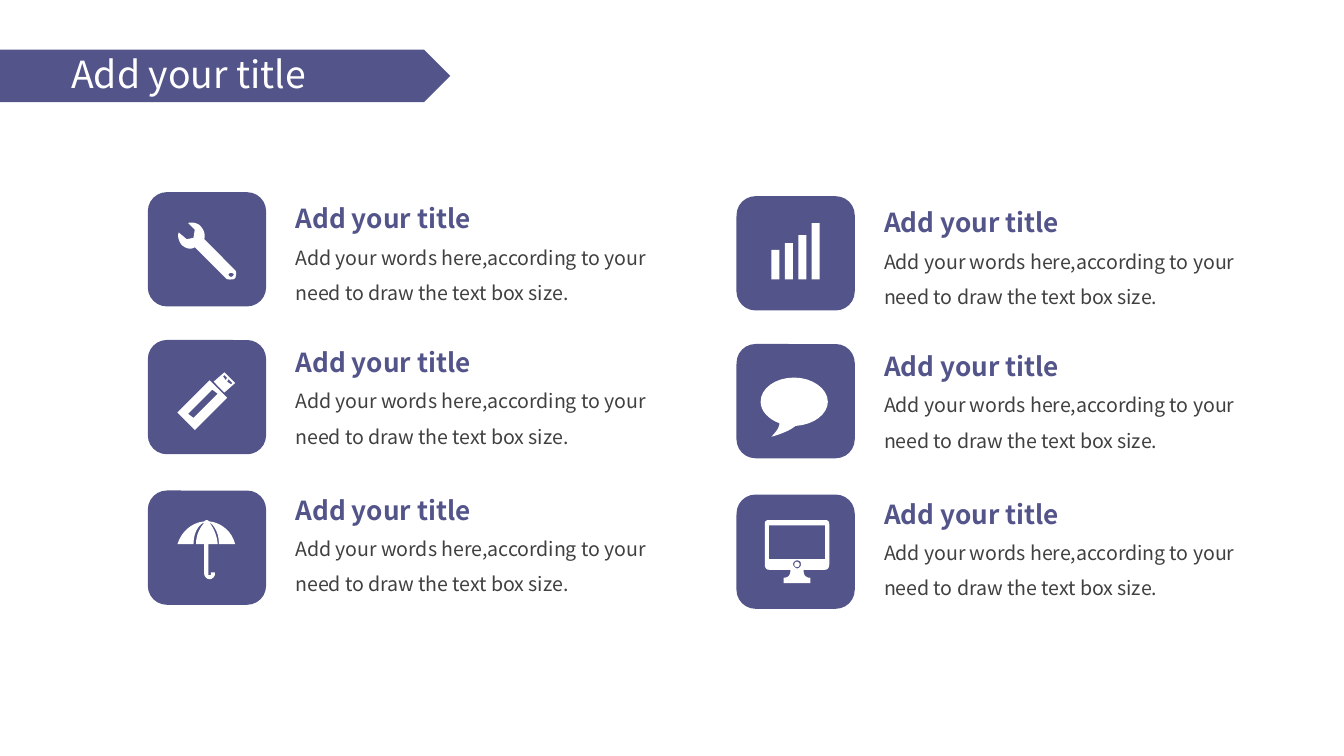
from pptx import Presentation
from pptx.dml.color import RGBColor
from pptx.enum.shapes import MSO_SHAPE as Preset
from pptx.enum.text import MSO_ANCHOR as Anchor, MSO_AUTO_SIZE as AutoSize, PP_ALIGN as Align
from pptx.util import Inches, Pt

PURPLE = RGBColor(0x53, 0x54, 0x8A)
WHITE = RGBColor(0xFF, 0xFF, 0xFF)
GREY = RGBColor(0x40, 0x40, 0x40)
FONT = "Noto Sans CJK JP"
HEADING = "Add your title"
BODY = "Add your words here,according to your need to draw the text box size."

COLUMNS = (1.1, 5.48)
TILE_ROWS = (1.43, 2.53, 3.65)
TEXT_ROWS = (1.34, 2.41, 3.51)
RIGHT_DROP = 0.03
TILE_WIDTH, TILE_HEIGHT = 0.88, 0.85
CURVE_STEPS = 8

WRENCH = [
    [(42, 35), (43, 32, 42, 28, 39, 25), (37, 23, 33, 22, 30, 23), (35, 28), (34, 34),
     (29, 35), (23, 30), (22, 33, 23, 36, 25, 39), (28, 42, 32, 43, 35, 41), (58, 64),
     (59, 65, 60, 65, 61, 65), (63, 65, 64, 65, 65, 64), (66, 62, 66, 59, 65, 58)],
    [(62, 63), (61, 63, 60, 62, 60, 61), (60, 61, 61, 60, 62, 60),
     (63, 60, 64, 61, 64, 61), (64, 62, 63, 63, 62, 63)],
]
USB_PLUG = [
    [(65, 32), (57, 24), (49, 31), (57, 39)],
    [(58, 30), (56, 27), (57, 26), (59, 28)],
    [(62, 33), (59, 31), (60, 29), (63, 32)],
]
USB_BODY = [
    [(46, 30), (22, 54), (35, 67), (59, 43)],
    [(34, 58), (30, 55), (48, 37), (52, 40)],
]
UMBRELLA = [
    [(53, 40), (65, 40), (63, 31, 55, 24, 46, 23), (45, 23, 45, 22, 44, 22),
     (43, 22, 42, 23, 42, 23), (32, 24, 25, 31, 22, 40), (34, 40),
     (34, 29, 40, 24, 42, 24), (35, 32, 36, 40, 36, 40), (42, 40), (42, 62),
     (42, 64, 44, 66, 46, 66), (48, 66, 50, 64, 50, 62), (50, 61), (47, 61), (47, 62),
     (47, 63, 47, 63, 46, 63), (45, 63, 45, 63, 45, 62), (45, 40), (52, 40),
     (52, 40, 52, 32, 46, 24), (47, 24, 53, 29, 53, 40)],
]
BUBBLE = [
    [(68, 43), (68, 33, 56, 25, 43, 25), (29, 25, 18, 33, 18, 43),
     (18, 50, 24, 56, 32, 59), (32, 61, 31, 64, 26, 69), (26, 69, 38, 66, 44, 61),
     (58, 60, 68, 52, 68, 43)],
]
MONITOR = [
    [(66, 19), (24, 19), (22, 19, 21, 20, 21, 22), (21, 52), (21, 54, 22, 56, 24, 56),
     (40, 56), (40, 56, 41, 62, 35, 62), (35, 66), (55, 66), (55, 62),
     (49, 62, 50, 56, 50, 56), (66, 56), (68, 56, 69, 54, 69, 52), (69, 22),
     (69, 20, 68, 19, 66, 19)],
    [(42, 52), (42, 50, 44, 49, 45, 49), (47, 49, 48, 50, 48, 52),
     (48, 53, 47, 55, 45, 55), (44, 55, 42, 53, 42, 52)],
    [(66, 48), (24, 48), (24, 23), (66, 23)],
]
BAR_TOPS, BAR_BOTTOM = (0.4, 0.35, 0.29, 0.2), 0.62


def paint(shape, color):
    """Give a shape a flat fill without line or shadow."""
    shape.shadow.inherit = False
    shape.fill.solid()
    shape.fill.fore_color.rgb = color
    shape.line.fill.background()
    return shape


def add_preset(page, kind, left, top, width, height, color):
    """Add a flat preset shape placed in inches."""
    lengths = map(Inches, (left, top, width, height))
    return paint(page.shapes.add_shape(kind, *lengths), color)


def flatten(contour):
    """Turn line ends (pairs) and Bézier curves (sixes) into a list of points."""
    points = [contour[0]]
    for segment in contour[1:]:
        if len(segment) == 2:
            points.append(segment)
            continue
        start, first, second, end = points[-1], segment[:2], segment[2:4], segment[4:]
        for step in range(1, CURVE_STEPS + 1):
            t = step / CURVE_STEPS
            s = 1 - t
            points.append(tuple(
                s**3 * a + 3 * s * s * t * b + 3 * s * t * t * c + t**3 * d
                for a, b, c, d in zip(start, first, second, end)))
    return points


def add_outline(page, left, top, contours):
    """Draw white contours, given in hundredths of an inch from the tile corner."""
    builder = None
    for contour in contours:
        points = [(Inches(left + x / 100), Inches(top + y / 100)) for x, y in flatten(contour)]
        if builder is None:
            builder = page.shapes.build_freeform(*points[0], scale=1.0)
        else:
            builder.move_to(*points[0])
        builder.add_line_segments(points[1:], close=True)
    paint(builder.convert_to_shape(), WHITE)


def add_wrench(page, left, top):
    """Draw the wrench icon."""
    add_outline(page, left, top, WRENCH)


def add_usb_stick(page, left, top):
    """Draw the USB stick icon."""
    add_outline(page, left, top, USB_PLUG)
    add_outline(page, left, top, USB_BODY)


def add_umbrella(page, left, top):
    """Draw the umbrella icon."""
    add_outline(page, left, top, UMBRELLA)


def add_bars(page, left, top):
    """Draw the rising bars icon."""
    for index, bar_top in enumerate(BAR_TOPS):
        add_preset(page, Preset.RECTANGLE, left + 0.26 + index * 0.1, top + bar_top,
                   0.06, BAR_BOTTOM - bar_top, WHITE)


def add_bubble(page, left, top):
    """Draw the speech bubble icon."""
    add_outline(page, left, top, BUBBLE)


def add_monitor(page, left, top):
    """Draw the monitor icon with its button."""
    add_outline(page, left, top, MONITOR)
    add_preset(page, Preset.OVAL, left + 0.43, top + 0.5, 0.04, 0.04, WHITE)


def add_span(para, text, size, color, bold=False):
    """Add one formatted run to a paragraph."""
    span = para.add_run()
    span.text = text
    span.font.name = FONT
    span.font.size = Pt(size)
    span.font.bold = bold
    span.font.color.rgb = color


def add_banner(page):
    """Place the title over its arrow-shaped banner."""
    banner = add_preset(page, Preset.PENTAGON, 0, 0.37, 3.35, 0.39, PURPLE)
    title = page.shapes.title
    banner.element.addnext(title.element)
    title.left, title.top, title.width, title.height = map(Inches, (0.43, 0.33, 2.7, 0.47))
    frame = title.text_frame
    frame.auto_size = AutoSize.NONE
    frame.vertical_anchor = Anchor.TOP
    para = frame.paragraphs[0]
    para.alignment = Align.LEFT
    add_span(para, HEADING, 20, WHITE)


def add_description(page, left, top):
    """Add a heading with its body text."""
    box = page.shapes.add_textbox(*map(Inches, (left, top, 2.86, 0.98)))
    frame = box.text_frame
    frame.word_wrap = True
    frame.auto_size = AutoSize.SHAPE_TO_FIT_TEXT
    heading, body = frame.paragraphs[0], frame.add_paragraph()
    heading.line_spacing = body.line_spacing = 1.5
    add_span(heading, HEADING, 14, PURPLE, bold=True)
    add_span(body, BODY, 10.5, GREY)


def main():
    """Build the slide and save it."""
    deck = Presentation()
    deck.slide_width = Inches(10)
    deck.slide_height = deck.slide_width * 9 // 16
    page = deck.slides.add_slide(deck.slide_layouts[5])
    add_banner(page)
    icons = ((add_wrench, add_usb_stick, add_umbrella), (add_bars, add_bubble, add_monitor))
    for column, (left, column_icons) in enumerate(zip(COLUMNS, icons)):
        drop = column * RIGHT_DROP
        for tile_top, text_top, add_icon in zip(TILE_ROWS, TEXT_ROWS, column_icons):
            add_preset(page, Preset.ROUNDED_RECTANGLE, left, tile_top + drop,
                       TILE_WIDTH, TILE_HEIGHT, PURPLE)
            add_icon(page, left, tile_top + drop)
            add_description(page, left + 1, text_top + drop)
    deck.save("out.pptx")


if __name__ == "__main__":
    main()
